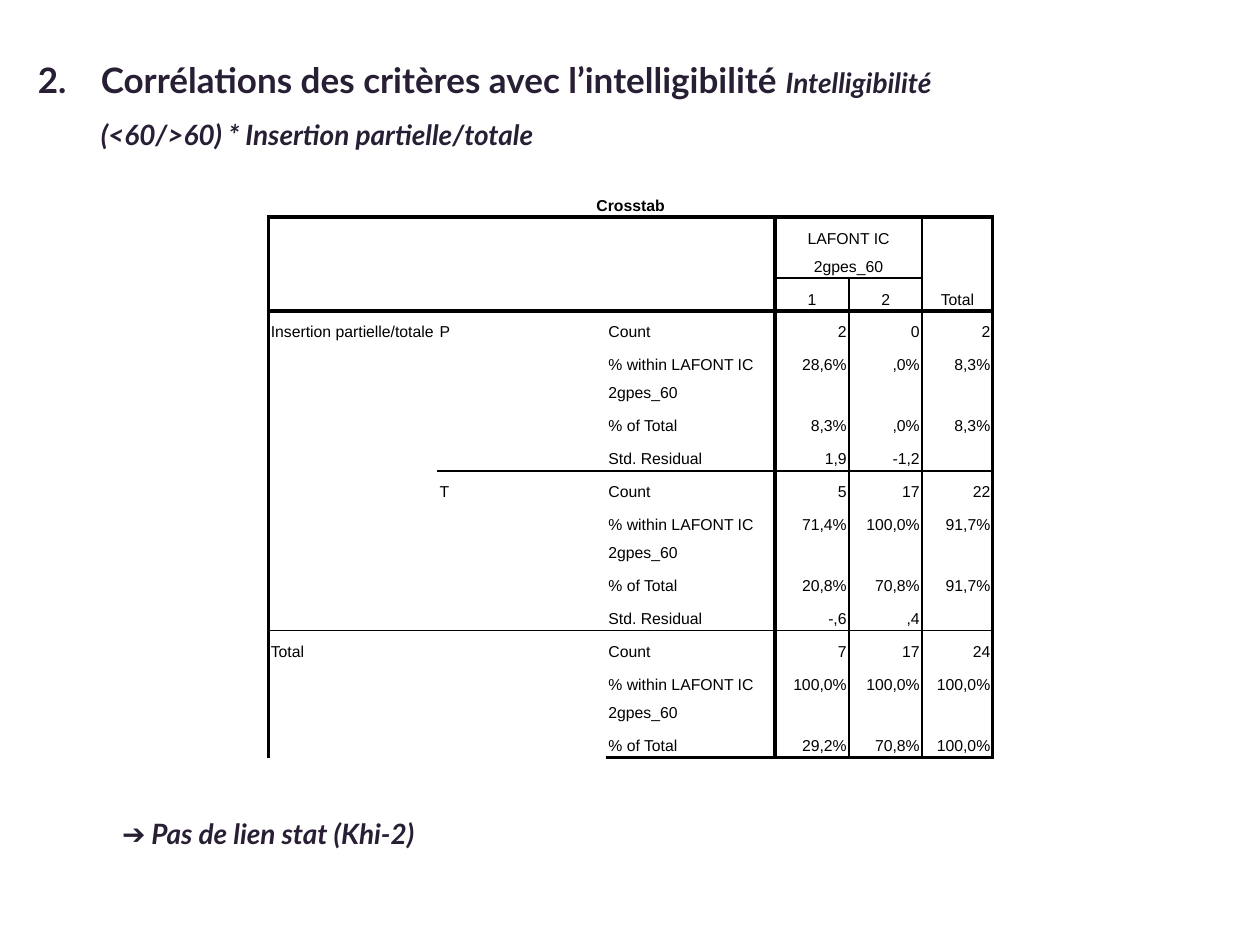
from lxml.etree import SubElement
from pptx import Presentation
from pptx.dml.color import RGBColor
from pptx.enum.text import MSO_ANCHOR, MSO_AUTO_SIZE, PP_ALIGN
from pptx.oxml.ns import qn
from pptx.util import Inches, Pt

COLORS = {"heading": "291F35", "black": "000000", "white": "FFFFFF"}
THICK, THIN = 2.25, 1

COL_WIDTHS = [1.34, 1.34, 1.34, 0.59, 0.58, 0.56]
LOW, HIGH = 0.25, 0.47
ROW_HEIGHTS = [LOW, HIGH, LOW] + [LOW, HIGH, LOW, LOW] * 2 + [LOW, HIGH, LOW]

STATS = ["Count", "% within LAFONT IC 2gpes_60", "% of Total", "Std. Residual"]
GROUPS = [
    [("2", "0", "2"), ("28,6%", ",0%", "8,3%"), ("8,3%", ",0%", "8,3%"),
     ("1,9", "-1,2", "")],
    [("5", "17", "22"), ("71,4%", "100,0%", "91,7%"),
     ("20,8%", "70,8%", "91,7%"), ("-,6", ",4", "")],
    [("7", "17", "24"), ("100,0%", "100,0%", "100,0%"),
     ("29,2%", "70,8%", "100,0%")],
]
LABELS = {(0, 0): "Crosstab", (1, 3): "LAFONT IC 2gpes_60", (1, 5): "Total",
          (2, 3): "1", (2, 4): "2", (3, 0): "Insertion partielle/totale",
          (3, 1): "P", (7, 1): "T", (11, 0): "Total"}
MERGES = [((0, 0), (0, 5)), ((1, 3), (1, 4)), ((1, 5), (2, 5)),
          ((3, 0), (10, 0)), ((3, 1), (6, 1)), ((7, 1), (10, 1)),
          ((11, 0), (13, 1))]

# grid line: (width, first cell along it, last cell along it)
VERTICALS = {0: (THICK, 1, 13), 3: (THICK, 1, 13), 4: (THIN, 2, 13),
             5: (THIN, 1, 13), 6: (THICK, 1, 13)}
HORIZONTALS = {1: (THICK, 0, 5), 2: (THIN, 3, 4), 3: (THICK, 0, 5),
               7: (THIN, 1, 5), 11: (THIN, 0, 5), 14: (THICK, 0, 5)}


def color(name):
    return RGBColor.from_string(COLORS[name])


def format_run(r, size, font, color_name, bold=False, italic=False):
    f = r.font
    f.size, f.name, f.bold, f.italic = Pt(size), font, bold, italic
    f.color.rgb = color(color_name)


def add_heading(s):
    sp = s.shapes.title
    sp.left, sp.top = Inches(0.2), Inches(0.25)
    sp.width, sp.height = Inches(7.52), Inches(1.51)
    tf = sp.text_frame
    tf.auto_size = MSO_AUTO_SIZE.NONE
    tf.word_wrap = True
    tf.vertical_anchor = MSO_ANCHOR.TOP
    p = tf.paragraphs[0]
    p.alignment = PP_ALIGN.LEFT
    p.line_spacing = 1.5
    pPr = p._p.get_or_add_pPr()
    pPr.set("marL", str(Inches(0.5)))
    pPr.set("indent", str(Inches(-0.5)))
    r = p.add_run()
    r.text = "2.\tCorrélations des critères avec l’intelligibilité "
    format_run(r, 20, "Lato", "heading", bold=True)
    r = p.add_run()
    r.text = "Intelligibilité (<60/>60) * Insertion partielle/totale"
    format_run(r, 16, "Lato", "heading", bold=True, italic=True)


def add_conclusion(s):
    sp = s.shapes.add_textbox(Inches(0.87), Inches(6.43), Inches(3.11), Inches(0.37))
    tf = sp.text_frame
    tf.word_wrap = False
    tf.text = "➔ Pas de lien stat (Khi-2)"
    format_run(tf.paragraphs[0].runs[0], 16, "Lato", "heading", bold=True, italic=True)


def line_width(lines, position, along):
    """Width of the grid line at a position, 0 where none runs past the cell."""
    width, first, last = lines.get(position, (0, 0, 0))
    return width if first <= along <= last else 0


def set_borders(cell, row, col):
    tcPr = cell._tc.get_or_add_tcPr()
    widths = {"a:lnL": line_width(VERTICALS, col, row),
              "a:lnR": line_width(VERTICALS, col + 1, row),
              "a:lnT": line_width(HORIZONTALS, row, col),
              "a:lnB": line_width(HORIZONTALS, row + 1, col)}
    for tag, width in widths.items():
        ln = SubElement(tcPr, qn(tag), w=str(Pt(width)))
        if width:
            fill = SubElement(ln, qn("a:solidFill"))
            SubElement(fill, qn("a:srgbClr"), val=COLORS["black"])
        else:
            SubElement(ln, qn("a:noFill"))


def format_cell(cell, row, col, text):
    set_borders(cell, row, col)
    cell.fill.solid()
    cell.fill.fore_color.rgb = color("white")
    cell.margin_left = cell.margin_right = Inches(0.02)
    cell.margin_top = cell.margin_bottom = Inches(0.02)
    p = cell.text_frame.paragraphs[0]
    p.line_spacing = Pt(16)
    if row < 3:
        p.alignment = PP_ALIGN.CENTER
        cell.vertical_anchor = MSO_ANCHOR.BOTTOM if row else MSO_ANCHOR.MIDDLE
    elif col > 2:
        p.alignment = PP_ALIGN.RIGHT
    if text:
        r = p.add_run()
        r.text = text
        format_run(r, 9, "Arial", "black", bold=row == 0)
    else:
        SubElement(p._p, qn("a:endParaRPr"), sz="900")


def table_texts():
    texts = dict(LABELS)
    row = 3
    for group in GROUPS:
        for stat, values in zip(STATS, group):
            for col, text in enumerate((stat, *values), start=2):
                texts[row, col] = text
            row += 1
    return texts


def add_crosstab(s):
    n_rows, n_cols = len(ROW_HEIGHTS), len(COL_WIDTHS)
    table = s.shapes.add_table(n_rows, n_cols, Inches(2.13), Inches(1.46),
                               Inches(5.75), Inches(4.59)).table
    table.first_row = table.horz_banding = False
    for column, width in zip(table.columns, COL_WIDTHS):
        column.width = Inches(width)
    for table_row, height in zip(table.rows, ROW_HEIGHTS):
        table_row.height = Inches(height)
    texts = table_texts()
    for row in range(n_rows):
        for col in range(n_cols):
            format_cell(table.cell(row, col), row, col, texts.get((row, col)))
    for first, last in MERGES:
        table.cell(*first).merge(table.cell(*last))


def main():
    prs = Presentation()
    prs.slide_width, prs.slide_height = Inches(10), Inches(7.5)
    s = prs.slides.add_slide(prs.slide_layouts[5])
    add_heading(s)
    add_conclusion(s)
    add_crosstab(s)
    prs.save("out.pptx")


if __name__ == "__main__":
    main()
